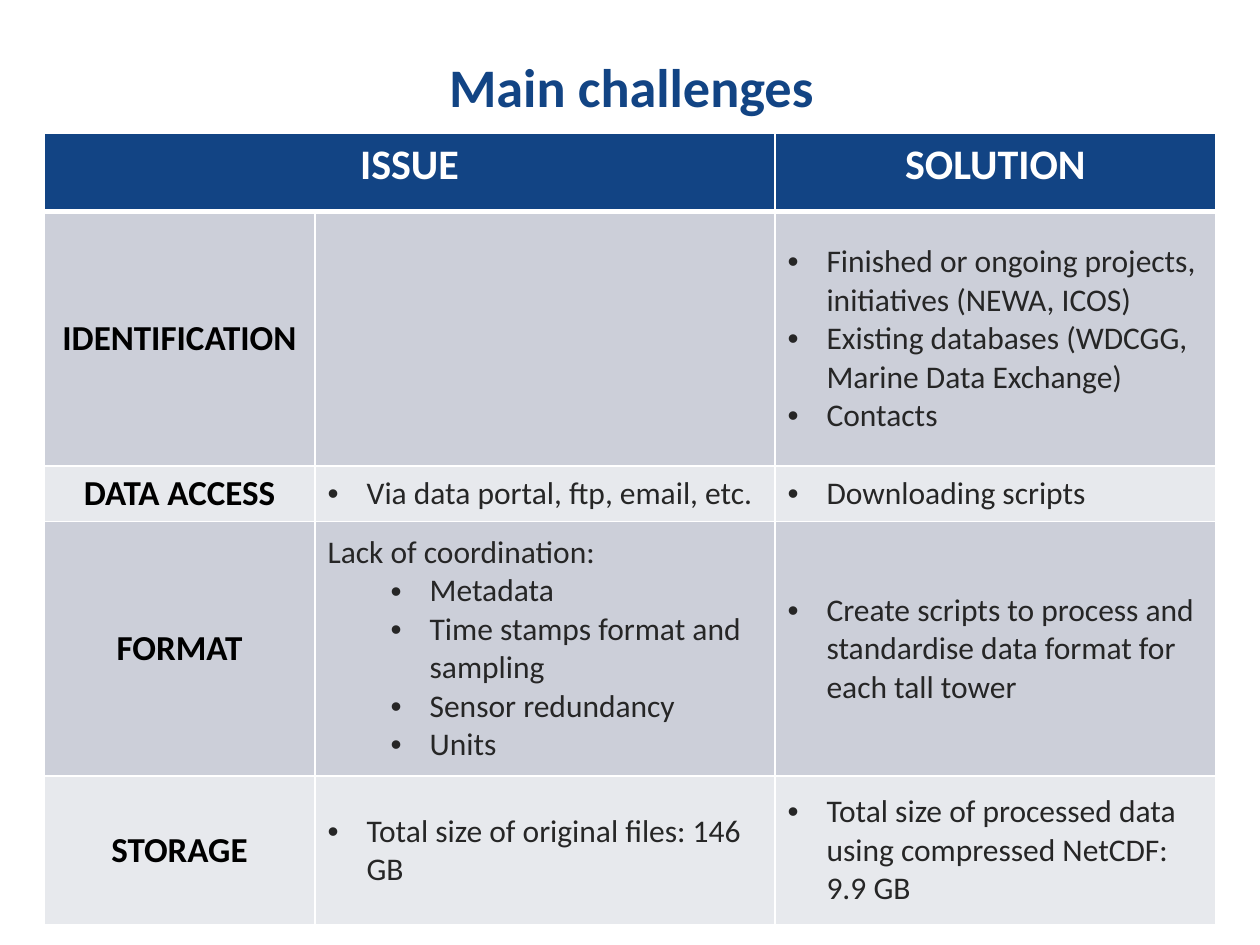
"""Build the slide on the main challenges of collecting tall tower data."""
import lxml.etree
import pptx
import pptx.dml.color
import pptx.enum.text
import pptx.oxml.ns
import pptx.util

Inches = pptx.util.Inches
Pt = pptx.util.Pt
ALIGN = pptx.enum.text.PP_ALIGN
ANCHOR = pptx.enum.text.MSO_ANCHOR
qn = pptx.oxml.ns.qn

COLUMN_WIDTHS = [2.15, 3.65, 3.5]
ROW_HEIGHTS = [0.62, 2.02, 0.43, 2.02, 1.18]
HEADERS = ["ISSUE", "", "SOLUTION"]
CHALLENGES = [
    ("IDENTIFICATION", [], [
        (0, "Finished or ongoing projects, initiatives (NEWA, ICOS)"),
        (0, "Existing databases (WDCGG, Marine Data Exchange)"),
        (0, "Contacts"),
    ]),
    ("DATA ACCESS", [(0, "Via data portal, ftp, email, etc.")], [(0, "Downloading scripts")]),
    ("FORMAT", [
        (None, "Lack of coordination:"),
        (1, "Metadata"),
        (1, "Time stamps format and sampling"),
        (1, "Sensor redundancy"),
        (1, "Units"),
    ], [(0, "Create scripts to process and standardise data format for each tall tower")]),
    ("STORAGE", [(0, "Total size of original files: 146 GB")],
     [(0, "Total size of processed data using compressed NetCDF: 9.9 GB")]),
]


def rgb(value):
    return pptx.dml.color.RGBColor.from_string(value)


class SlideBuilder:
    font = "Calibri"
    navy, white, black, body = "124484", "FFFFFF", "000000", "262626"
    bands = ["CCCFD9", "E7E9ED"]

    def __init__(self, presentation):
        self.slide = presentation.slides.add_slide(presentation.slide_layouts[5])

    def format_runs(self, paragraph, size, color, bold):
        for run in paragraph.runs:
            run.font.name = self.font
            run.font.size = Pt(size)
            run.font.bold = bold
            run.font.color.rgb = rgb(color)

    def title(self, text, left, top, width, height):
        shape = self.slide.shapes.title
        shape.left, shape.top = Inches(left), Inches(top)
        shape.width, shape.height = Inches(width), Inches(height)
        shape.text_frame.text = text
        shape.text_frame.vertical_anchor = ANCHOR.MIDDLE
        paragraph = shape.text_frame.paragraphs[0]
        paragraph.alignment = ALIGN.CENTER
        paragraph.line_spacing = Pt(35)
        self.format_runs(paragraph, 31, self.navy, True)

    def table(self, left, top, column_widths, row_heights):
        frame = self.slide.shapes.add_table(
            len(row_heights), len(column_widths), Inches(left), Inches(top),
            Inches(sum(column_widths)), Inches(sum(row_heights)))
        for column, width in zip(frame.table.columns, column_widths):
            column.width = Inches(width)
        for row, height in zip(frame.table.rows, row_heights):
            row.height = Inches(height)
        return frame.table

    def style_cell(self, cell, fill, top=1, bottom=1):
        properties = cell._tc.get_or_add_tcPr()
        for side, width in {"L": 1, "R": 1, "T": top, "B": bottom}.items():
            line = lxml.etree.SubElement(properties, qn(f"a:ln{side}"), w=str(Pt(width)))
            solid = lxml.etree.SubElement(line, qn("a:solidFill"))
            lxml.etree.SubElement(solid, qn("a:srgbClr"), val=self.white)
        cell.fill.solid()
        cell.fill.fore_color.rgb = rgb(fill)

    def label(self, cell, text, size, color, anchor):
        cell.text_frame.text = text
        cell.vertical_anchor = anchor
        paragraph = cell.text_frame.paragraphs[0]
        paragraph.alignment = ALIGN.CENTER
        self.format_runs(paragraph, size, color, True)

    def bullet(self, paragraph, level):
        paragraph.level = level
        properties = paragraph._p.get_or_add_pPr()
        properties.set("marL", str(Inches(0.31 + 0.5 * level)))
        properties.set("indent", str(Inches(-0.31)))
        lxml.etree.SubElement(properties, qn("a:buFont"), typeface="Arial")
        lxml.etree.SubElement(properties, qn("a:buChar"), char="•")

    def items(self, cell, entries):
        cell.vertical_anchor = ANCHOR.MIDDLE
        cell.text_frame.text = "\n".join(text for _, text in entries)
        for paragraph, (level, _) in zip(cell.text_frame.paragraphs, entries):
            if level is not None:
                self.bullet(paragraph, level)
            self.format_runs(paragraph, 18, self.body, False)


def main():
    presentation = pptx.Presentation()
    presentation.slide_width, presentation.slide_height = Inches(10), Inches(7.5)
    builder = SlideBuilder(presentation)
    builder.title("Main challenges", 0.51, 0.24, 9, 0.92)
    table = builder.table(0.35, 1.06, COLUMN_WIDTHS, ROW_HEIGHTS)

    for column, text in enumerate(HEADERS):
        cell = table.cell(0, column)
        builder.style_cell(cell, builder.navy, bottom=3)
        builder.label(cell, text, 24, builder.white, ANCHOR.TOP)
    table.cell(0, 0).merge(table.cell(0, 1))

    for row, (name, issues, solutions) in enumerate(CHALLENGES, start=1):
        for column in range(len(COLUMN_WIDTHS)):
            builder.style_cell(table.cell(row, column), builder.bands[(row - 1) % 2],
                               top=3 if row == 1 else 1)
        builder.label(table.cell(row, 0), name, 20, builder.black, ANCHOR.MIDDLE)
        builder.items(table.cell(row, 1), issues)
        builder.items(table.cell(row, 2), solutions)

    presentation.save("out.pptx")


if __name__ == "__main__":
    main()
